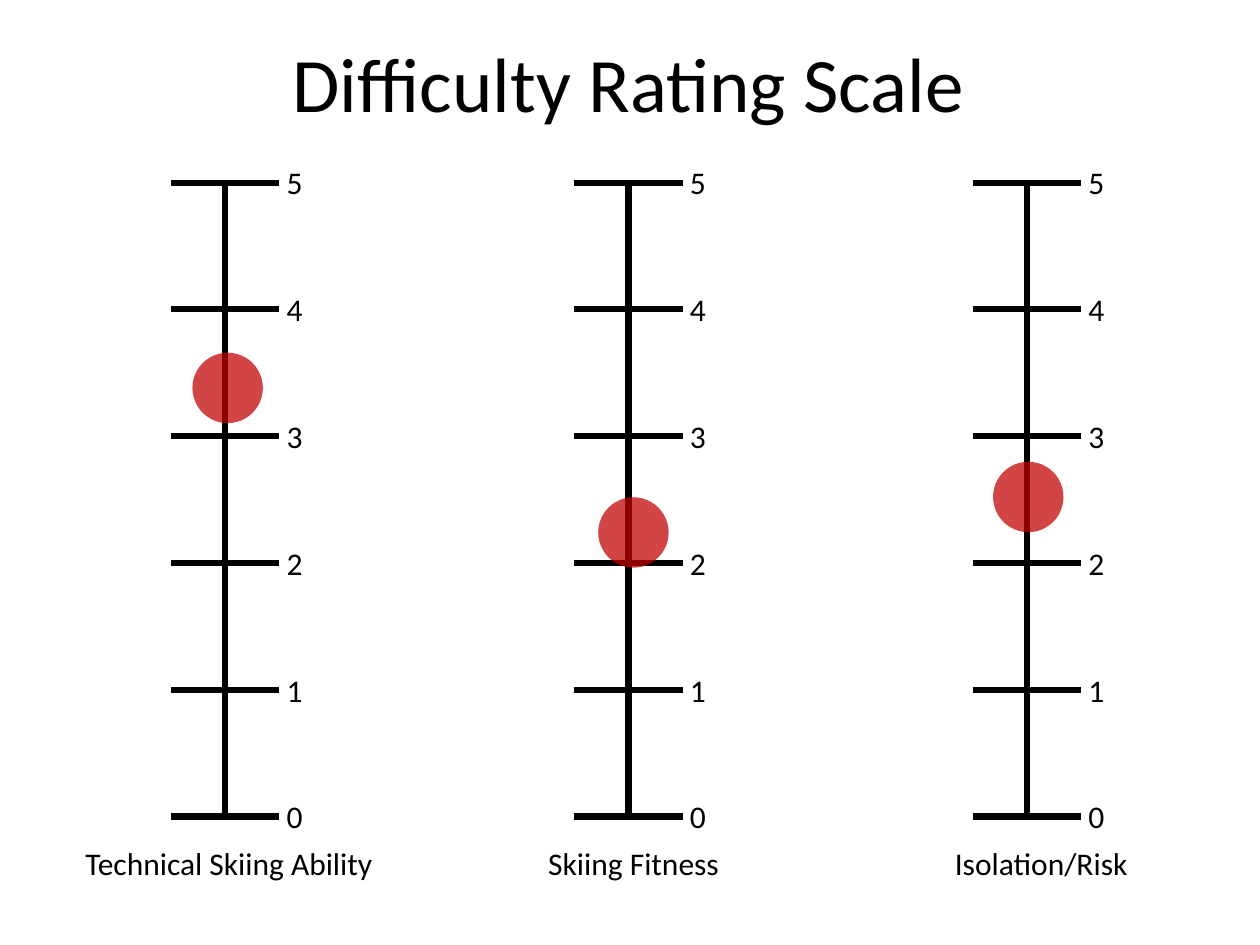
from lxml import etree
from pptx import Presentation
from pptx.dml.color import RGBColor
from pptx.enum.shapes import MSO_CONNECTOR, MSO_SHAPE
from pptx.enum.text import MSO_ANCHOR, MSO_AUTO_SIZE, PP_ALIGN
from pptx.oxml.ns import qn
from pptx.util import Cm, Pt

LEFT, CENTER = PP_ALIGN.LEFT, PP_ALIGN.CENTER
MIDDLE = MSO_ANCHOR.MIDDLE
FIT = MSO_AUTO_SIZE.SHAPE_TO_FIT_TEXT
STRAIGHT = MSO_CONNECTOR.STRAIGHT
OVAL = MSO_SHAPE.OVAL

FONT = "Calibri"
BLACK, RED = "000000", "C00000"
TOP_MARK = 5
DOT = 1.42

# Caption, its left offset, width and alignment; scale left; rating, dot shift
SCALES = [
    ("Technical Skiing Ability", -1.98, 6.96, LEFT, 3.45, 3.38, 0.05),
    ("Skiing Fitness", -1.27, 4.93, CENTER, 11.58, 2.24, 0.1),
    ("Isolation/Risk", -0.61, 4.93, LEFT, 19.61, 2.52, 0.03),
]


def color(target, code):
    target.rgb = RGBColor.from_string(code)


def style(frame, text, size, align):
    frame.text = text
    para = frame.paragraphs[0]
    para.alignment = align
    para.font.name = FONT
    para.font.size = Pt(size)
    color(para.font.color, BLACK)


def add_text(shapes, text, left, top, width, align=LEFT, wrap=False):
    box = shapes.add_textbox(Cm(left), Cm(top), Cm(width), Cm(1.02))
    style(box.text_frame, text, 18, align)
    box.text_frame.word_wrap = wrap
    box.text_frame.auto_size = FIT


def add_line(shapes, x1, y1, x2, y2):
    line = shapes.add_connector(STRAIGHT, Cm(x1), Cm(y1), Cm(x2), Cm(y2))
    line.line.width = Pt(3.5)
    color(line.line.color, BLACK)
    props = line._element.find(qn("p:spPr"))
    etree.SubElement(props, qn("a:effectLst"))


def add_dot(shapes, x, y):
    dot = shapes.add_shape(OVAL, Cm(x - DOT / 2), Cm(y - DOT / 2), Cm(DOT), Cm(DOT))
    dot.shadow.inherit = False
    dot.line.fill.background()
    dot.fill.solid()
    color(dot.fill.fore_color, RED)
    # Let the axis show through
    fill = dot._element.find(".//" + qn("a:srgbClr"))
    etree.SubElement(fill, qn("a:alpha")).set("val", "73000")


def add_scale(shapes, left, top, width, height, rating, shift):
    step = height / TOP_MARK
    mid = left + width / 2
    group = shapes.add_group_shape().shapes
    # Axis
    add_line(group, mid, top, mid, top + height)
    # Ticks and numbers
    for mark in range(TOP_MARK + 1):
        y = top + (TOP_MARK - mark) * step
        add_line(group, left, y, left + width, y)
        add_text(group, str(mark), left + width - 0.1, y - 0.51, 0.84)
    # Rating
    add_dot(shapes, mid + shift, top + (TOP_MARK - rating) * step)


def add_title(slide, text, left, top, width, height):
    title = slide.shapes.title
    title.left, title.top = Cm(left), Cm(top)
    title.width, title.height = Cm(width), Cm(height)
    style(title.text_frame, text, 44, CENTER)
    title.text_frame.vertical_anchor = MIDDLE


def main():
    deck = Presentation()
    deck.slide_width, deck.slide_height = Cm(25.4), Cm(19.05)
    slide = deck.slides.add_slide(deck.slide_layouts[5])
    add_title(slide, "Difficulty Rating Scale", 1.24, 0.05, 22.86, 3.18)
    for name, offset, width, align, left, rating, shift in SCALES:
        add_text(slide.shapes, name, left + offset, 16.89, width, align, True)
        add_scale(slide.shapes, left, 3.68, 2.18, 12.78, rating, shift)
    deck.save("out.pptx")


if __name__ == "__main__":
    main()
